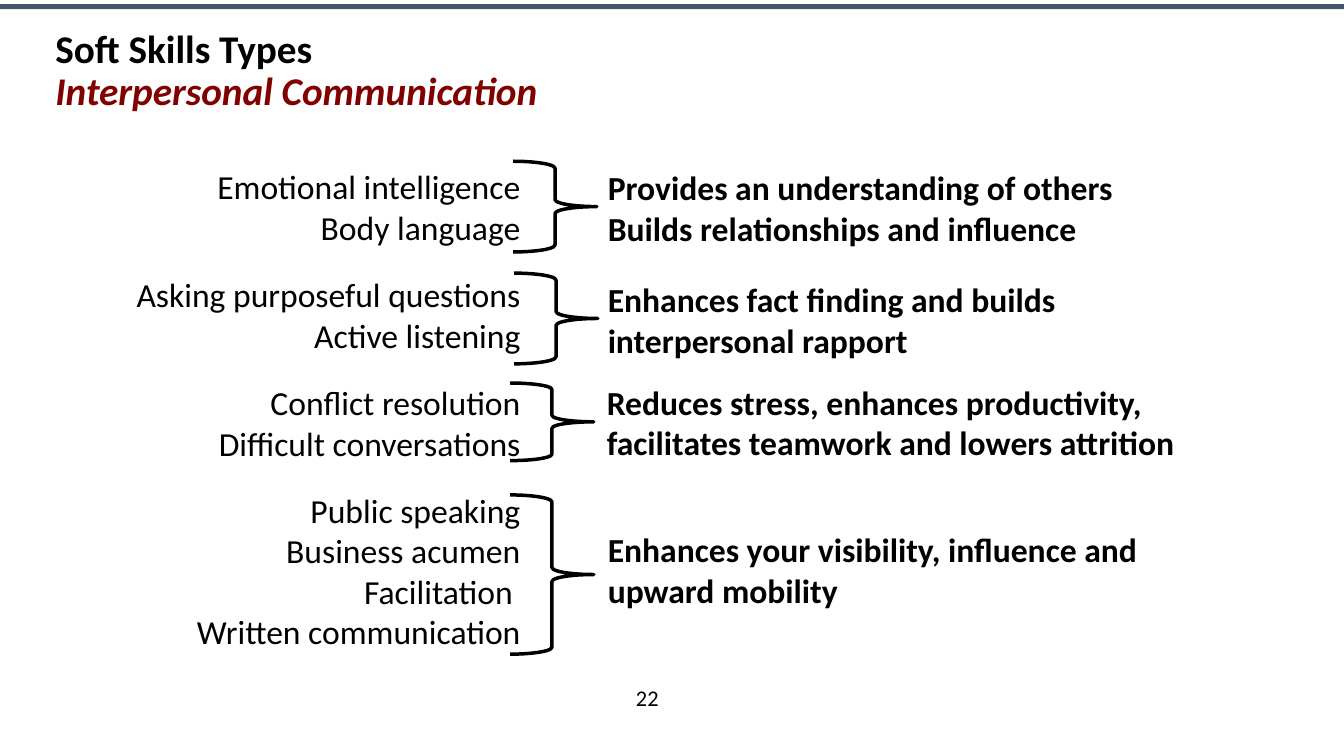
"""Build the slide on interpersonal communication skills."""
from pptx import Presentation
from pptx.dml.color import RGBColor
from pptx.enum.shapes import MSO_SHAPE
from pptx.enum.text import MSO_ANCHOR, PP_ALIGN
from pptx.util import Inches, Pt

RECT, BRACE = MSO_SHAPE.RECTANGLE, MSO_SHAPE.RIGHT_BRACE
TOP, MIDDLE = MSO_ANCHOR.TOP, MSO_ANCHOR.MIDDLE
LEFT, CENTER, RIGHT = PP_ALIGN.LEFT, PP_ALIGN.CENTER, PP_ALIGN.RIGHT

COLORS = {"text": "000000", "accent": "810000", "bar": "44546A"}
FONT = "Calibri"
TITLE = "Soft Skills Types\vInterpersonal Communication"
NUMBER = "22"
GROUPS = [
    {"skills": ["Emotional intelligence", "Body language"],
     "gains": ["Provides an understanding of others",
               "Builds relationships and influence"],
     "brace": (5.09, 1.6, 0.83, 0.9), "box": (5.93, 1.61, 5.42, 0.91)},
    {"skills": ["Asking purposeful questions", "Active listening"],
     "gains": ["Enhances fact finding and builds interpersonal rapport"],
     "brace": (5.1, 2.71, 0.83, 0.9), "box": (5.93, 2.72, 6.2, 0.91)},
    {"skills": ["Conflict resolution", "Difficult conversations"],
     "gains": ["Reduces stress, enhances productivity, "
               "facilitates teamwork and lowers attrition"],
     "brace": (5.06, 3.8, 0.83, 0.77), "box": (5.92, 3.74, 6.07, 0.91)},
    {"skills": ["Public speaking", "Business acumen", "Facilitation ",
                "Written communication"],
     "gains": ["Enhances your visibility, influence and upward mobility"],
     "brace": (5.06, 4.91, 0.83, 1.58), "box": (5.93, 5.2, 5.74, 0.91)},
]


def color(name):
    return RGBColor.from_string(COLORS[name])


def add_text(slide, area, lines, size=24, bold=False, align=LEFT, anchor=TOP):
    frame = slide.shapes.add_textbox(*map(Inches, area)).text_frame
    frame.word_wrap = True
    frame.vertical_anchor = anchor
    frame.text = "\n".join(lines)
    for para in frame.paragraphs:
        para.alignment = align
        for run in para.runs:
            run.font.name = FONT
            run.font.size = Pt(size)
            run.font.bold = bold
            run.font.color.rgb = color("text")
    return frame.paragraphs


def add_shape(slide, kind, area):
    shape = slide.shapes.add_shape(kind, *map(Inches, area))
    shape.shadow.inherit = False
    return shape


def main():
    deck = Presentation()
    deck.slide_width, deck.slide_height = Inches(13.33), Inches(7.5)
    slide = deck.slides.add_slide(deck.slide_layouts[6])

    bar = add_shape(slide, RECT, (0, 0.04, 13.33, 0.05))
    bar.fill.solid()
    bar.fill.fore_color.rgb = color("bar")
    bar.line.fill.background()
    add_text(slide, (6.05, 6.72, 0.74, 0.4), [NUMBER], 16,
             align=CENTER, anchor=MIDDLE)

    title = add_text(slide, (0.45, 0.24, 11.95, 0.94), [TITLE], 28, True)[0]
    title.line_spacing = 0.9
    topic = title.runs[-1].font
    topic.italic = True
    topic.color.rgb = color("accent")

    skills = [skill for group in GROUPS for skill in group["skills"]]
    paras = add_text(slide, (0.65, 1.6, 4.61, 4.44), skills, align=RIGHT)
    first = 0
    for group in GROUPS:
        if first:
            paras[first].space_before = Pt(19.5)
        first += len(group["skills"])
        brace = add_shape(slide, BRACE, group["brace"])
        brace.fill.background()
        brace.line.color.rgb = color("text")
        brace.line.width = Pt(2.5)
        add_text(slide, group["box"], group["gains"], bold=True)

    deck.save("out.pptx")


if __name__ == "__main__":
    main()
